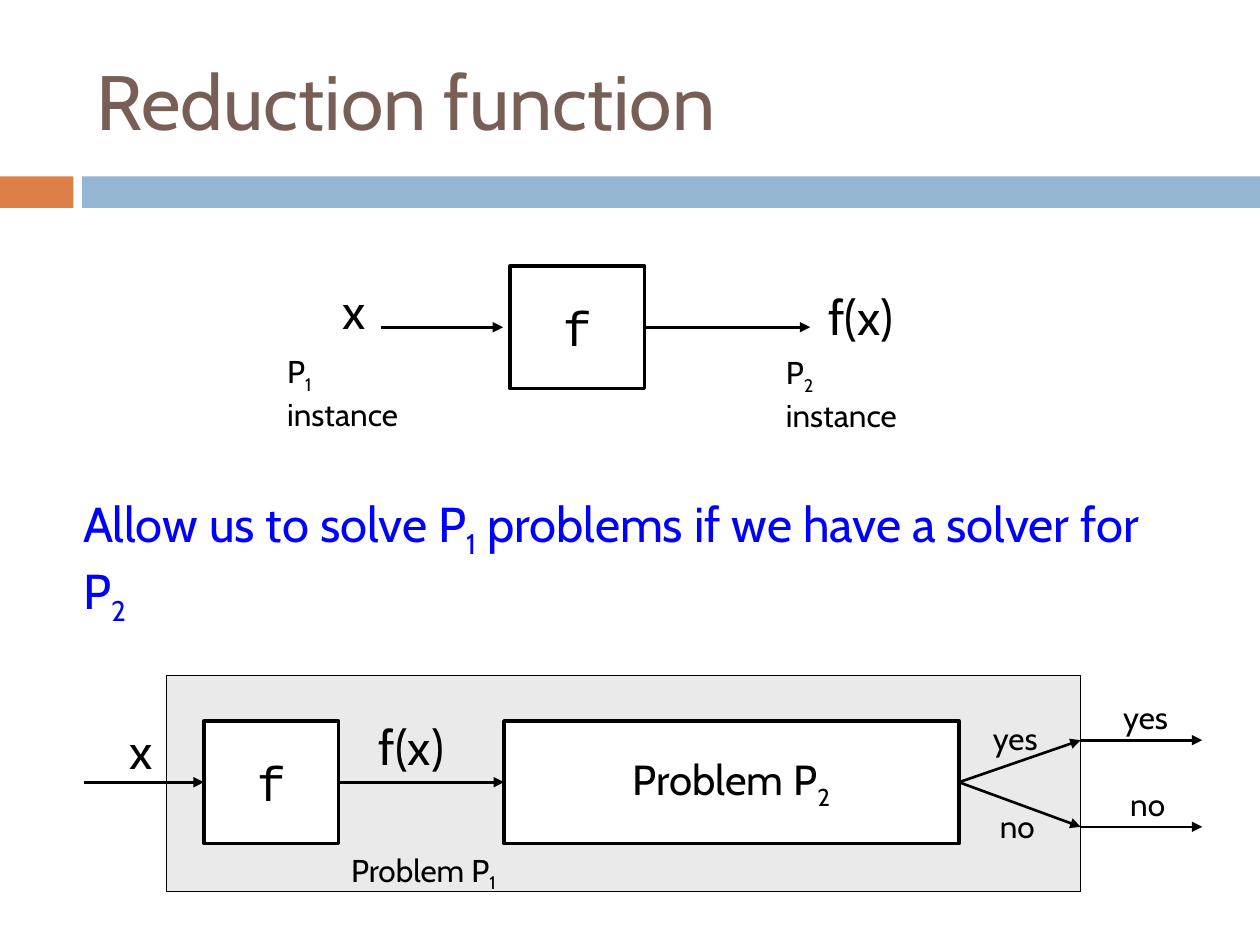
from lxml import etree
from pptx import Presentation
from pptx.dml.color import RGBColor
from pptx.enum.shapes import MSO_CONNECTOR, MSO_SHAPE
from pptx.enum.text import MSO_ANCHOR, PP_ALIGN
from pptx.oxml.ns import qn
from pptx.util import Pt

RECT = MSO_SHAPE.RECTANGLE
LINE = MSO_CONNECTOR.STRAIGHT
MIDDLE = MSO_ANCHOR.MIDDLE
TOP = MSO_ANCHOR.TOP
CENTER = PP_ALIGN.CENTER
LEFT, RIGHT = 1, 3

BLACK = RGBColor(0x00, 0x00, 0x00)
WHITE = RGBColor(0xFF, 0xFF, 0xFF)
GRAY = RGBColor(0xEA, 0xEA, 0xEA)
BROWN = RGBColor(0x77, 0x5F, 0x55)
ORANGE = RGBColor(0xDD, 0x80, 0x47)
SKY = RGBColor(0x94, 0xB6, 0xD2)
BLUE = RGBColor(0x00, 0x00, 0xFF)

SANS = "Cabin"
MONO = "Courier New"
BIG, SMALL = 28, 18


class Sketch:
    def __init__(self, slide):
        self.shapes = slide.shapes

    def fill_text(self, frame, parts, size, font=SANS, color=BLACK):
        para = frame.paragraphs[0]
        for index, part in enumerate(parts):
            run = para.add_run()
            run.text = part
            run.font.size = Pt(size)
            run.font.name = font
            run.font.color.rgb = color
            if index % 2:
                run.font._element.set("baseline", "-25000")
        return para

    def block(self, x, y, width, height, fill, weight=0):
        shape = self.shapes.add_shape(RECT, Pt(x), Pt(y), Pt(width), Pt(height))
        shape.shadow.inherit = False
        shape.fill.solid()
        shape.fill.fore_color.rgb = fill
        if weight:
            shape.line.color.rgb = BLACK
            shape.line.width = Pt(weight)
        else:
            shape.line.fill.background()
        return shape

    def box(self, x, y, width, parts, size, font=SANS):
        shape = self.block(x, y, width, 70, WHITE, 2)
        frame = shape.text_frame
        frame.word_wrap = False
        frame.vertical_anchor = MIDDLE
        self.fill_text(frame, parts, size, font).alignment = CENTER
        return shape

    def label(self, x, y, width, height, parts, size,
              color=BLACK, wrap=False, anchor=TOP):
        area = self.shapes.add_textbox(Pt(x), Pt(y), Pt(width), Pt(height))
        frame = area.text_frame
        frame.word_wrap = wrap
        frame.vertical_anchor = anchor
        self.fill_text(frame, parts, size, color=color)

    def arrow(self, x1, y1, x2, y2, start=None, end=None):
        line = self.shapes.add_connector(LINE, Pt(x1), Pt(y1), Pt(x2), Pt(y2))
        line.line.color.rgb = BLACK
        line.line.width = Pt(1.5)
        props = line._element.spPr
        etree.SubElement(props.find(qn("a:ln")), qn("a:tailEnd"), type="triangle")
        etree.SubElement(props, qn("a:effectLst"))
        if start:
            line.begin_connect(start, RIGHT)
        if end:
            line.end_connect(end, LEFT)


def main():
    deck = Presentation()
    deck.slide_width, deck.slide_height = Pt(720), Pt(540)
    art = Sketch(deck.slides.add_slide(deck.slide_layouts[6]))

    art.block(0, 100.8, 42, 18, ORANGE)
    art.block(46.8, 100.8, 673.2, 18, SKY)
    art.label(48, 18, 642, 78, ["Reduction function"], 44, BROWN, True, MIDDLE)

    art.block(95, 386, 522.5, 123.5, GRAY, 0.75)
    first = art.box(116.5, 412, 77, ["f"], BIG, MONO)
    solver = art.box(288, 412, 260, ["Problem P", "2"], 24)
    art.arrow(48, 447, 116.5, 447, end=first)
    art.arrow(193.5, 447, 288, 447, first, solver)
    for word, y, inner, outer, width in (
        ("yes", 423, 407.5, 395.5, 42.5),
        ("no", 472.5, 457.5, 445, 34.5),
    ):
        art.arrow(548, 447, 617.5, y, solver)
        art.arrow(617.5, y, 687, y)
        art.label(581.5 - width / 2, inner, width, 29, [word], SMALL)
        art.label(656 - width / 2, outer, width, 29, [word], SMALL)
    art.label(193.5, 482.5, 98, 29, ["Problem P", "1"], SMALL)

    art.label(40.5, 278.5, 637, 41,
              ["Allow us to solve P", "1",
               " problems if we have a solver for P", "2"],
              BIG, BLUE, True)

    mapper = art.box(291.5, 152, 77, ["f"], BIG, MONO)
    art.arrow(217.5, 187, 287.5, 187)
    art.arrow(368.5, 187, 463, 187, mapper)
    for x, y in ((67, 408), (188.5, 156.5)):
        art.label(x, y, 29, 41, ["x"], BIG)
    for x, y in ((209.5, 406), (466.5, 160)):
        art.label(x, y, 53, 41, ["f(x)"], BIG)
    for x, y, mark in ((157, 197.5, "1"), (442, 198, "2")):
        art.label(x, y, 92, 29, ["P", mark, " instance"], SMALL, wrap=True)

    deck.save("out.pptx")


if __name__ == "__main__":
    main()
